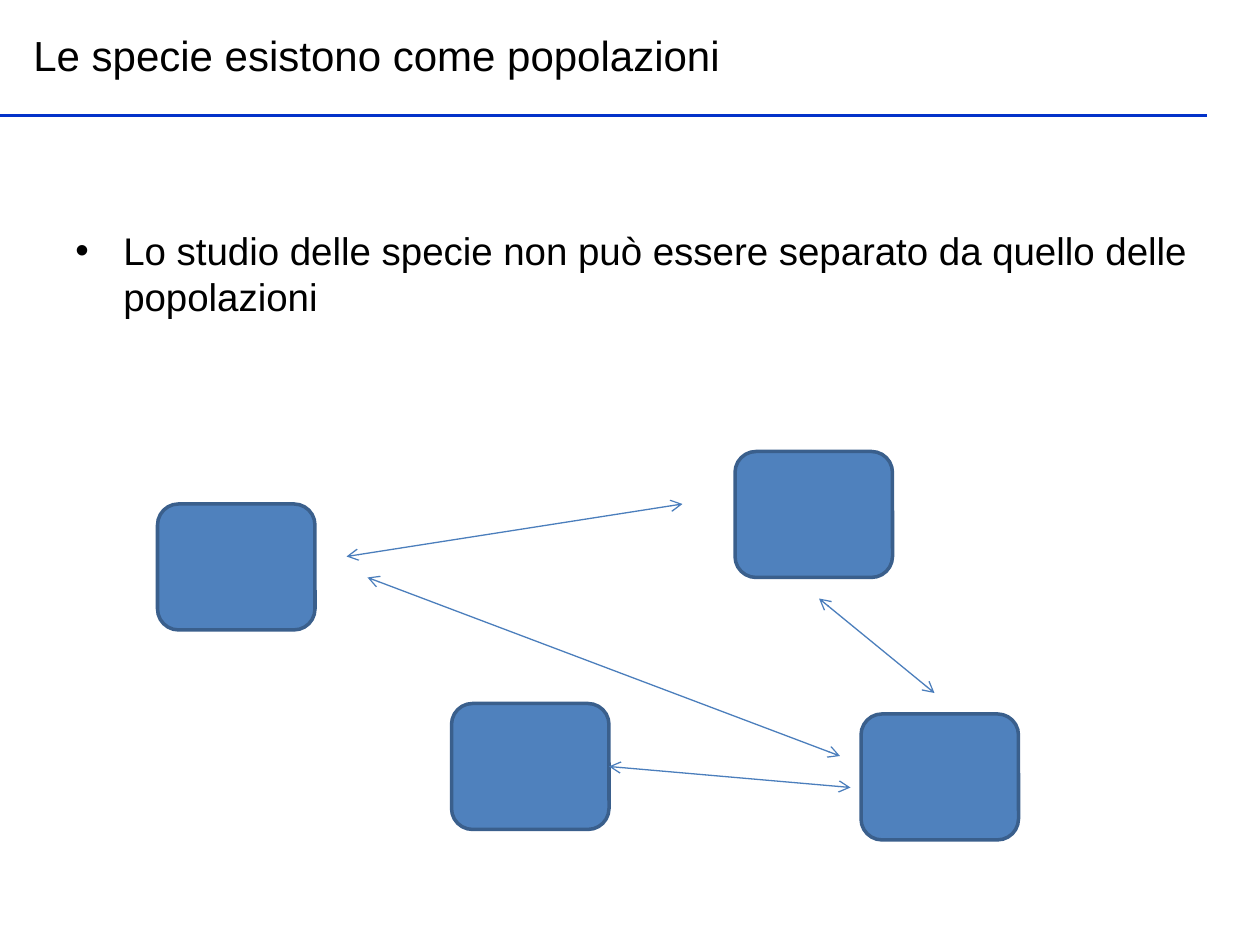
from pptx import Presentation
from pptx.dml.color import RGBColor as Color
from pptx.enum.shapes import MSO_CONNECTOR as Connector, MSO_SHAPE as Preset
from pptx.enum.text import MSO_ANCHOR as Anchor, MSO_AUTO_SIZE as AutoSize
from pptx.oxml.ns import qn
from pptx.util import Inches, Pt
from lxml.etree import SubElement

THEME = {
    "font": "Arial", "text": "000000", "title_size": 24, "body_size": 22,
    "rule": ("0332C9", 2), "arrow": ("4B7EBC", 0.75),
    "box_fill": "4F81BD", "box_line": ("3A5F8C", 2),
}

deck = Presentation()
deck.slide_width, deck.slide_height = Inches(10), Inches(7.5)
page = deck.slides.add_slide(deck.slide_layouts[6])
UNIT = deck.slide_width / 120  # the page is 120 columns by 90 rows


def grid(*cells):
    return [round(cell * UNIT) for cell in cells]


def add_line(start, end, style, arrows=False):
    line = page.shapes.add_connector(Connector.STRAIGHT, *grid(*start, *end))
    color, width = style
    line.line.color.rgb = Color.from_string(color)
    line.line.width = Pt(width)
    properties = line._element.spPr
    if arrows:
        outline = properties.find(qn("a:ln"))
        for tag in ("a:headEnd", "a:tailEnd"):
            SubElement(outline, qn(tag), type="arrow")
    SubElement(properties, qn("a:effectLst"))


# Body and title
TEXTS = [
    ("Lo studio delle specie non può essere separato da quello delle popolazioni",
     (6, 21, 112, 44), THEME["body_size"],
     {"vertical_anchor": Anchor.TOP, "auto_size": AutoSize.NONE}),
    ("Le specie esistono come popolazioni",
     (2, 2.2, 102, 6), THEME["title_size"],
     {"vertical_anchor": Anchor.MIDDLE, "auto_size": AutoSize.SHAPE_TO_FIT_TEXT}),
]
paras = []
for words, place, size, layout in TEXTS:
    frame = page.shapes.add_textbox(*grid(*place)).text_frame
    for name, value in {"word_wrap": True, **layout}.items():
        setattr(frame, name, value)
    para = frame.paragraphs[0]
    span = para.add_run()
    span.text = words
    for name, value in {"name": THEME["font"], "size": Pt(size)}.items():
        setattr(span.font, name, value)
    span.font.color.rgb = Color.from_string(THEME["text"])
    paras.append(para)

body = paras[0]
body.space_before = Pt(0.2 * THEME["body_size"])
indent = Inches(0.38)
bullet_format = body._p.get_or_add_pPr()
bullet_format.set("marL", str(indent))
bullet_format.set("indent", str(-indent))
SubElement(bullet_format, qn("a:buFont"), typeface=THEME["font"])
SubElement(bullet_format, qn("a:buChar"), char="•")

add_line((0, 11), (115, 11), THEME["rule"])

# Populations
for column, row in [(15, 48), (70, 43), (43, 67), (82, 68)]:
    box = page.shapes.add_shape(Preset.ROUNDED_RECTANGLE, *grid(column, row, 15, 12))
    box.shadow.inherit = False
    box.fill.solid()
    box.fill.fore_color.rgb = Color.from_string(THEME["box_fill"])
    color, width = THEME["box_line"]
    box.line.color.rgb = Color.from_string(color)
    box.line.width = Pt(width)

# Exchanges between populations
for start, end in [((33, 53), (65, 48)), ((35, 55), (80, 72)),
                   ((78, 57), (89, 66)), ((58, 73), (81, 75))]:
    add_line(start, end, THEME["arrow"], arrows=True)

deck.save("out.pptx")
